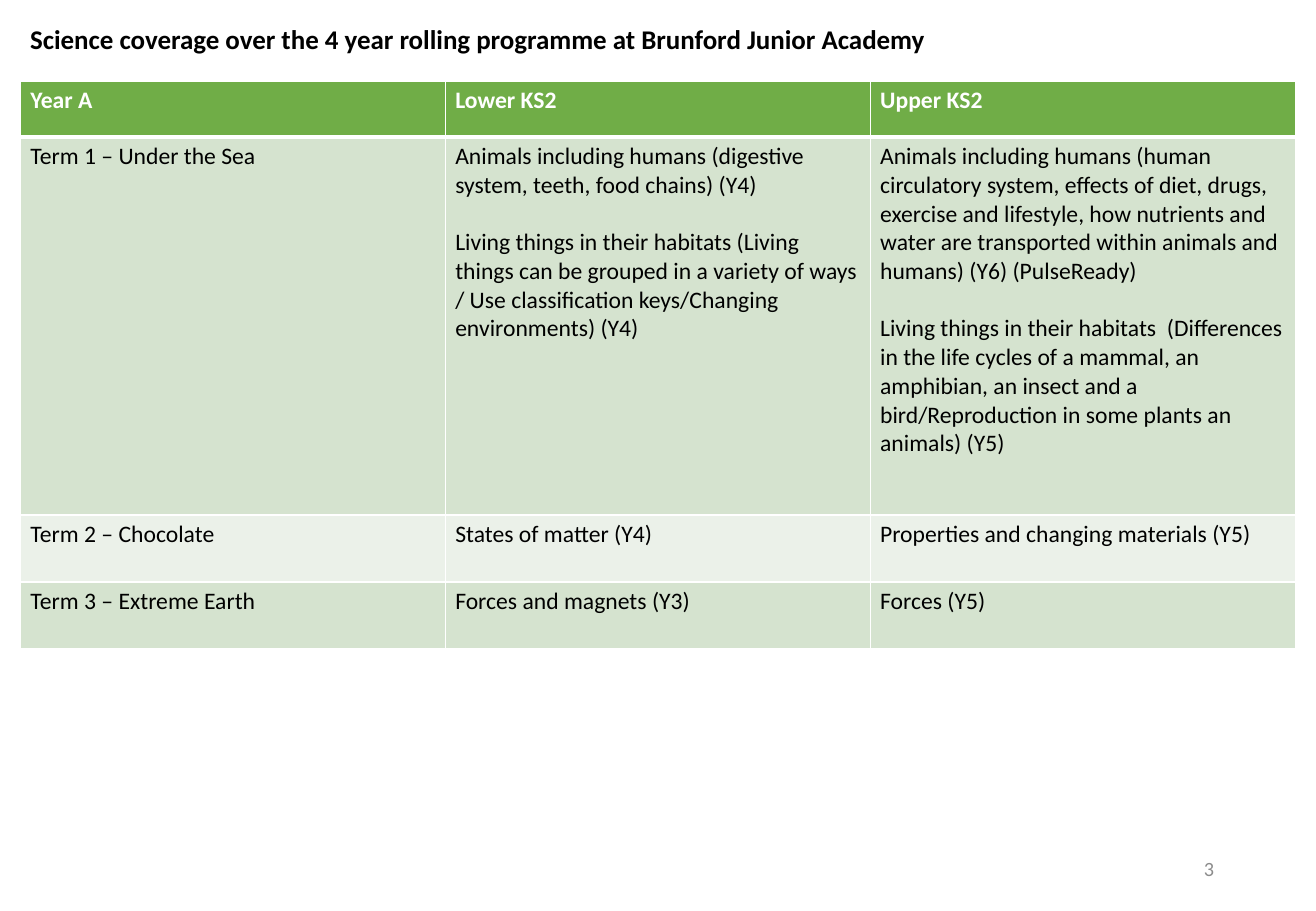
from lxml import etree
from pptx import Presentation
from pptx.dml.color import RGBColor
from pptx.enum import text
from pptx.oxml import ns
from pptx.util import Inches, Pt

TITLE = "Science coverage over the 4 year rolling programme at Brunford Junior Academy"
PAGE = "3"
ROWS = [
    (0.46, ["Year A"], ["Lower KS2"], ["Upper KS2"]),
    (3.11, ["Term 1 – Under the Sea"],
     ["Animals including humans (digestive system, teeth, food chains) (Y4)",
      "Living things in their habitats (Living things can be grouped in a variety of ways "
      "/ Use classification keys/Changing environments) (Y4)"],
     ["Animals including humans (human circulatory system, effects of diet, drugs, exercise "
      "and lifestyle, how nutrients and water are transported within animals and humans) "
      "(Y6) (PulseReady)",
      "Living things in their habitats  (Differences in the life cycles of a mammal, an "
      "amphibian, an insect and a bird/Reproduction in some plants an animals) (Y5)"]),
    (0.55, ["Term 2 – Chocolate"], ["States of matter (Y4)"],
     ["Properties and changing materials (Y5)"]),
    (0.55, ["Term 3 – Extreme Earth"], ["Forces and magnets (Y3)"], ["Forces (Y5)"]),
]
THEME = {
    "font": "Calibri", "title": 16, "body": 14, "page": 12, "gap": 17,
    "ink": "000000", "white": "FFFFFF", "grey": "8C8C8C",
    "header": "70AD47", "bands": ("EBF1E9", "D5E3CF"),
    "rule": 1, "header_rule": 3,
}


def style(p, size, color, bold=False):
    for r in p.runs:
        r.font.name = THEME["font"]
        r.font.size = Pt(size)
        r.font.bold = bold
        r.font.color.rgb = RGBColor.from_string(color)


def add_text(s, box, words, size, color, bold=False,
             align=text.PP_ALIGN.LEFT, anchor=text.MSO_ANCHOR.TOP):
    tf = s.shapes.add_textbox(*map(Inches, box)).text_frame
    tf.word_wrap = True
    tf.vertical_anchor = anchor
    tf.text = words
    p = tf.paragraphs[0]
    p.alignment = align
    style(p, size, color, bold)


def add_borders(cell, row):
    tcPr = cell._tc.get_or_add_tcPr()
    heavy = {"lnB": 0, "lnT": 1}
    for side in ("lnL", "lnR", "lnT", "lnB"):
        width = THEME["header_rule" if heavy.get(side) == row else "rule"]
        ln = etree.SubElement(tcPr, ns.qn("a:" + side), w=str(Pt(width)))
        fill = etree.SubElement(ln, ns.qn("a:solidFill"))
        etree.SubElement(fill, ns.qn("a:srgbClr"), val=THEME["white"])


def fill_cell(cell, row, paragraphs):
    header = row == 0
    cell.margin_left = cell.margin_right = Inches(0.08)
    cell.margin_top = cell.margin_bottom = Inches(0.04)
    add_borders(cell, row)
    cell.fill.solid()
    cell.fill.fore_color.rgb = RGBColor.from_string(
        THEME["header"] if header else THEME["bands"][row % 2])
    tf = cell.text_frame
    tf.text = "\n".join(paragraphs)
    for i, p in enumerate(tf.paragraphs):
        p.space_before = Pt(THEME["gap"] if i else 0)
        style(p, THEME["body"], THEME["white" if header else "ink"], header)


def add_coverage(s, left, top, width):
    height = sum(row[0] for row in ROWS)
    columns = len(ROWS[0]) - 1
    table = s.shapes.add_table(len(ROWS), columns,
                               *map(Inches, (left, top, width, height))).table
    for column in table.columns:
        column.width = Inches(width / columns)
    for i, (row_height, *cells) in enumerate(ROWS):
        table.rows[i].height = Inches(row_height)
        for j, paragraphs in enumerate(cells):
            fill_cell(table.cell(i, j), i, paragraphs)


def main():
    prs = Presentation()
    prs.slide_width, prs.slide_height = Inches(10.83), Inches(7.5)
    s = prs.slides.add_slide(prs.slide_layouts[6])
    add_text(s, (0.15, 0.14, 9.15, 0.37), TITLE, THEME["title"], THEME["ink"], bold=True)
    add_coverage(s, 0.17, 0.67, 10.49)
    add_text(s, (7.65, 6.95, 2.44, 0.4), PAGE, THEME["page"], THEME["grey"],
             align=text.PP_ALIGN.RIGHT, anchor=text.MSO_ANCHOR.MIDDLE)
    prs.save("out.pptx")


if __name__ == "__main__":
    main()
